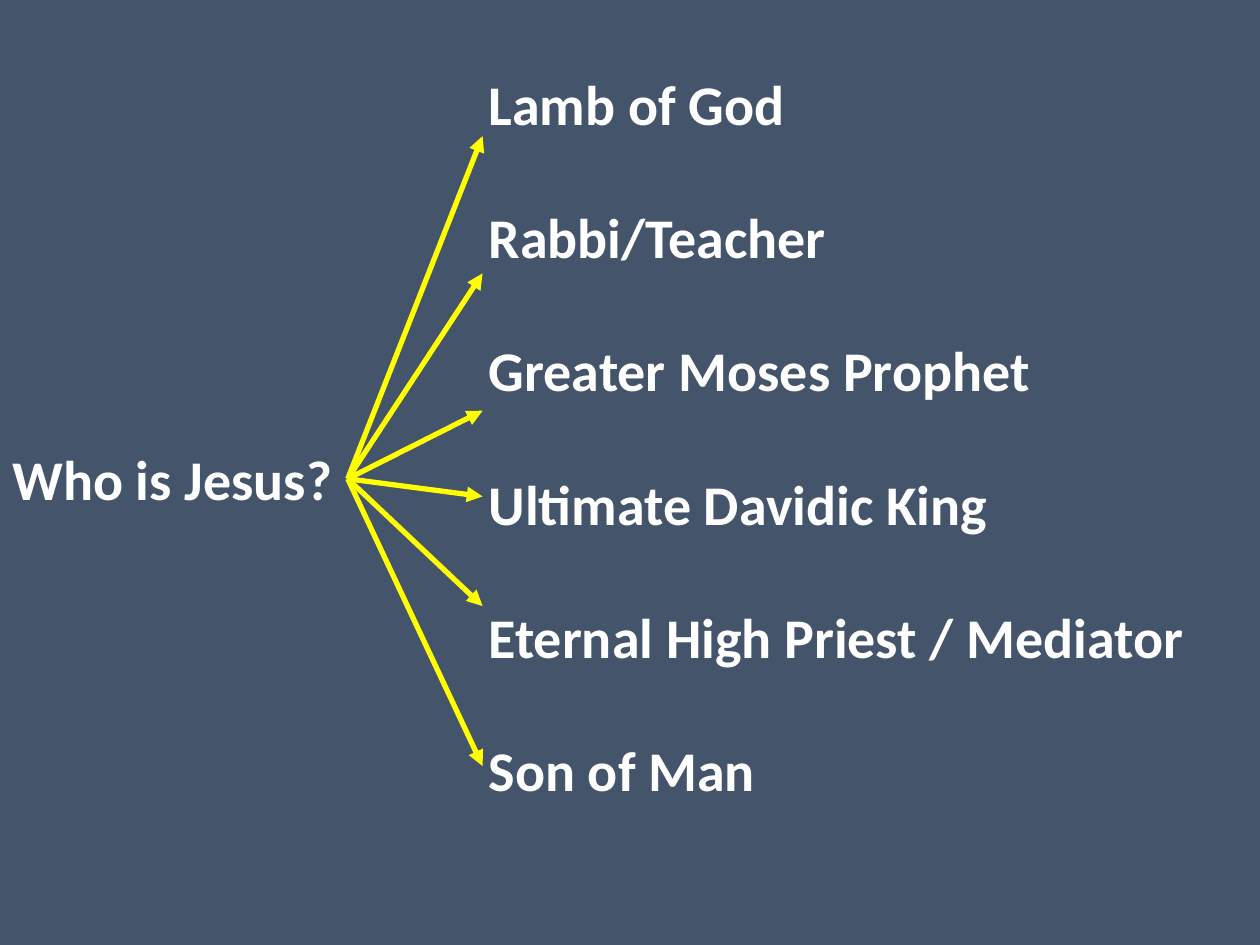
from dataclasses import dataclass

from lxml.etree import SubElement
from pptx import Presentation
from pptx.dml.color import RGBColor
from pptx.enum.shapes import MSO_CONNECTOR
from pptx.enum.text import MSO_AUTO_SIZE
from pptx.oxml.ns import qn
from pptx.shapes.connector import Connector
from pptx.shapes.shapetree import GroupShapes
from pptx.slide import Slide
from pptx.util import Pt


@dataclass(frozen=True)
class Theme:
    background: RGBColor = RGBColor(0x44, 0x54, 0x6A)
    text: RGBColor = RGBColor(0xFF, 0xFF, 0xFF)
    arrow: RGBColor = RGBColor(0xFF, 0xFF, 0x00)
    font: str = "Calibri"
    text_size: float = 32
    arrow_width: float = 3


@dataclass(frozen=True)
class Answer:
    text: str
    arrow_end: float


THEME = Theme()
ARROW_START = (198.72, 273.6)
ARROW_RIGHT = 275.76
ANSWERS = [
    Answer("Lamb of God", 77.76),
    Answer("Rabbi/Teacher", 156.24),
    Answer("Greater Moses Prophet", 234.72),
    Answer("Ultimate Davidic King", 283.68),
    Answer("Eternal High Priest / Mediator", 346.32),
    Answer("Son of Man", 437.76),
]


def add_text(slide: Slide, lines: list[str], *, left: float, top: float,
             width: float, height: float, gap: float = 0) -> None:
    """Add a text box with one paragraph per line, separated by gap."""
    box = slide.shapes.add_textbox(Pt(left), Pt(top), Pt(width), Pt(height))
    frame = box.text_frame
    frame.word_wrap = True
    frame.auto_size = MSO_AUTO_SIZE.SHAPE_TO_FIT_TEXT
    frame.text = "\n".join(lines)
    for index, paragraph in enumerate(frame.paragraphs):
        paragraph.space_before = Pt(gap if index else 0)
        font = paragraph.runs[0].font
        font.name = THEME.font
        font.size = Pt(THEME.text_size)
        font.bold = True
        font.color.rgb = THEME.text


def add_arrow(shapes: GroupShapes, end_y: float) -> Connector:
    """Draw an arrow from the question to one answer."""
    start_x, start_y = ARROW_START
    arrow = shapes.add_connector(
        MSO_CONNECTOR.STRAIGHT,
        Pt(start_x), Pt(start_y), Pt(ARROW_RIGHT), Pt(end_y),
    )
    arrow.line.color.rgb = THEME.arrow
    arrow.line.width = Pt(THEME.arrow_width)
    SubElement(arrow.line._get_or_add_ln(), qn("a:tailEnd"), type="triangle")
    SubElement(arrow._element.spPr, qn("a:effectLst"))
    return arrow


def main() -> None:
    presentation = Presentation()
    presentation.slide_width = Pt(720)
    presentation.slide_height = Pt(540)
    slide = presentation.slides.add_slide(presentation.slide_layouts[6])

    # Background
    fill = slide.background.fill
    fill.solid()
    fill.fore_color.rgb = THEME.background

    # Question and answers
    add_text(slide, ["Who is Jesus?"], left=0, top=250.56, width=198.72, height=46.08)
    add_text(slide, [answer.text for answer in ANSWERS],
             left=272.16, top=36, width=447.84, height=433.44, gap=37.75)

    # Fan of arrows
    fan = slide.shapes.add_group_shape()
    for answer in ANSWERS:
        add_arrow(fan.shapes, answer.arrow_end)

    presentation.save("out.pptx")


if __name__ == "__main__":
    main()
